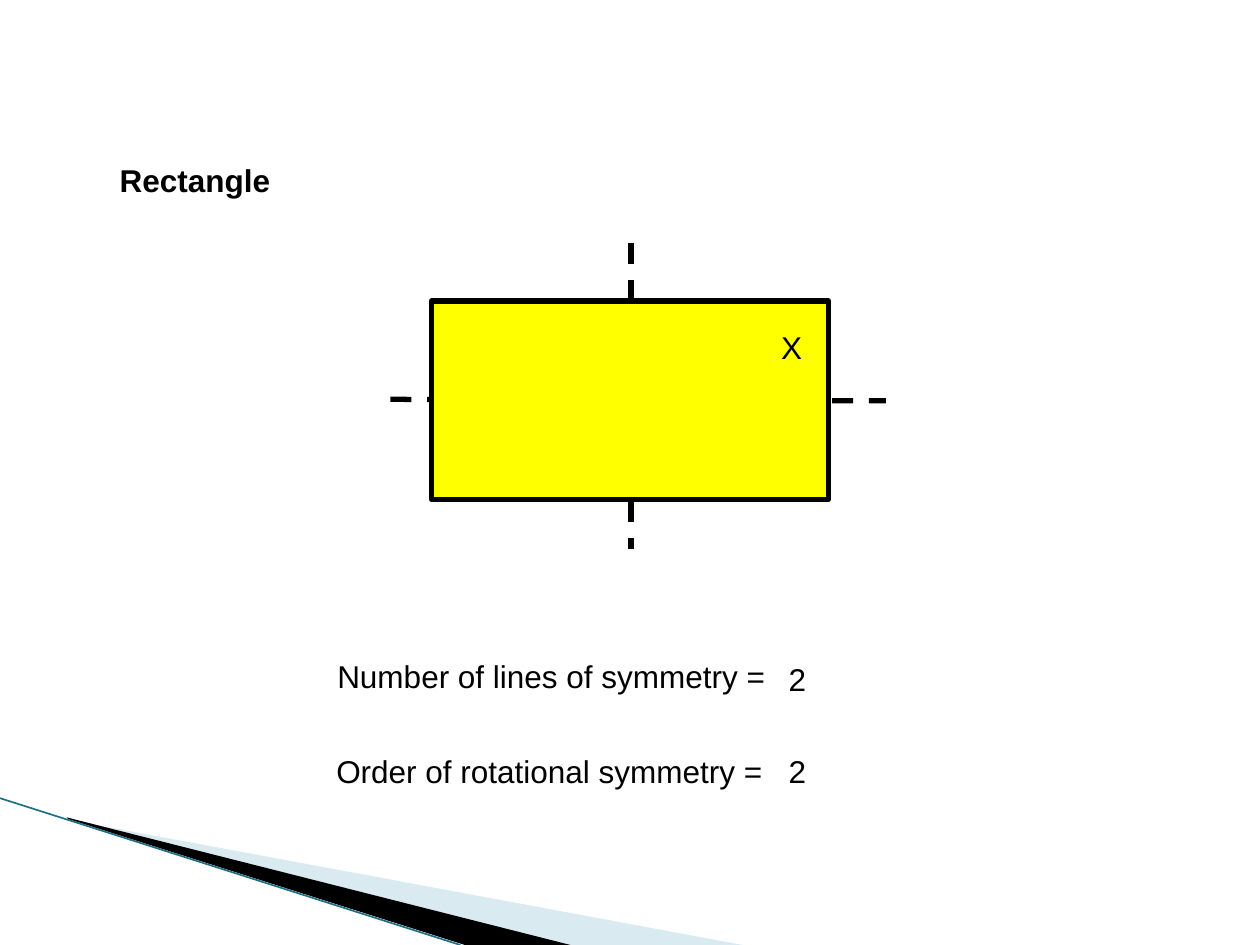
from lxml import etree
from pptx import Presentation
from pptx.dml.color import RGBColor
from pptx.enum.dml import MSO_LINE
from pptx.enum.shapes import MSO_CONNECTOR, MSO_SHAPE
from pptx.enum.text import MSO_ANCHOR, MSO_AUTO_SIZE, PP_ALIGN
from pptx.oxml.ns import qn
from pptx.util import Cm, Pt

BLACK = RGBColor(0x00, 0x00, 0x00)
YELLOW = RGBColor(0xFF, 0xFF, 0x00)
PALE_BLUE = RGBColor(0xA0, 0xCB, 0xDC)
TEAL = RGBColor(0x1F, 0x70, 0x85)

STRAIGHT = MSO_CONNECTOR.STRAIGHT
RECTANGLE = MSO_SHAPE.RECTANGLE
DASH = MSO_LINE.DASH
LEFT, RIGHT = PP_ALIGN.LEFT, PP_ALIGN.RIGHT
TOP = MSO_ANCHOR.TOP
NO_AUTOFIT = MSO_AUTO_SIZE.NONE
FIT_SHAPE = MSO_AUTO_SIZE.SHAPE_TO_FIT_TEXT

TITLE_ONLY = 5
TEXT_HEIGHT = 1.02


def format_text(shape, text, bold=False, alignment=LEFT):
    text_frame = shape.text_frame
    text_frame.text = text
    text_frame.word_wrap = True
    text_frame.vertical_anchor = TOP
    paragraph = text_frame.paragraphs[0]
    paragraph.alignment = alignment
    font = paragraph.runs[0].font
    font.name = "Arial"
    font.size = Pt(18)
    font.bold = bold
    font.color.rgb = BLACK


def add_title(slide, text, left, top, width):
    title = slide.shapes.title
    title.left, title.top = Cm(left), Cm(top)
    title.width, title.height = Cm(width), Cm(TEXT_HEIGHT)
    format_text(title, text, bold=True)
    title.text_frame.auto_size = NO_AUTOFIT


def add_text(slide, text, left, top, width):
    box = slide.shapes.add_textbox(Cm(left), Cm(top), Cm(width), Cm(TEXT_HEIGHT))
    format_text(box, text)
    box.text_frame.auto_size = FIT_SHAPE


def add_wedge(slide, points, color, opacity=100):
    start, *others = [(Cm(x), Cm(y)) for x, y in points]
    builder = slide.shapes.build_freeform(*start)
    builder.add_line_segments(others, close=True)
    wedge = builder.convert_to_shape()
    wedge.shadow.inherit = False
    wedge.line.fill.background()
    wedge.fill.solid()
    wedge.fill.fore_color.rgb = color
    if opacity < 100:
        color_element = wedge.fill._xPr.find(qn("a:solidFill"))[0]
        etree.SubElement(color_element, qn("a:alpha")).set("val", str(opacity * 1000))


def add_line(slide, start, end, color, width, dash=None):
    line = slide.shapes.add_connector(
        STRAIGHT, Cm(start[0]), Cm(start[1]), Cm(end[0]), Cm(end[1]))
    line.line.color.rgb = color
    line.line.width = Pt(width)
    if dash is not None:
        line.line.dash_style = dash
    etree.SubElement(line._element.spPr, qn("a:effectLst"))


def add_marked_rectangle(slide, mark, left, top, width, height):
    rectangle = slide.shapes.add_shape(
        RECTANGLE, Cm(left), Cm(top), Cm(width), Cm(height))
    rectangle.shadow.inherit = False
    rectangle.fill.solid()
    rectangle.fill.fore_color.rgb = YELLOW
    rectangle.line.color.rgb = BLACK
    rectangle.line.width = Pt(3)
    format_text(rectangle, mark, alignment=RIGHT)
    rectangle.text_frame.margin_top = Cm(0.55)
    rectangle.text_frame.margin_right = Cm(0.53)


def main():
    presentation = Presentation()
    presentation.slide_width = Cm(25.4)
    presentation.slide_height = Cm(19.05)
    slide = presentation.slides.add_slide(presentation.slide_layouts[TITLE_ONLY])

    # Corner decoration
    add_wedge(slide, [(1.4, 16.53), (14.97, 19.05), (11.47, 19.05), (1.4, 16.51)],
              PALE_BLUE, opacity=40)
    add_wedge(slide, [(1.35, 16.48), (11.5, 19.05), (9.37, 19.05), (1.37, 16.51)],
              BLACK)
    add_line(slide, (0, 16.09), (9.28, 19.05), TEAL, 0.95)

    # Lines of symmetry behind the rectangle
    add_line(slide, (12.72, 4.9), (12.72, 11.07), BLACK, 3, DASH)
    add_line(slide, (7.87, 8.05), (17.86, 8.08), BLACK, 3, DASH)
    add_marked_rectangle(slide, "X", 8.7, 6.07, 8, 4)

    # Shape name and its symmetry
    add_title(slide, "Rectangle", 2.16, 3.12, 5.87)
    add_text(slide, "Number of lines of symmetry =", 6.55, 13.13, 9.96)
    add_text(slide, "2", 15.65, 13.18, 2.1)
    add_text(slide, "Order of rotational symmetry =", 6.53, 15.04, 9.25)
    add_text(slide, "2", 15.65, 15.04, 2.1)

    presentation.save("out.pptx")


if __name__ == "__main__":
    main()
